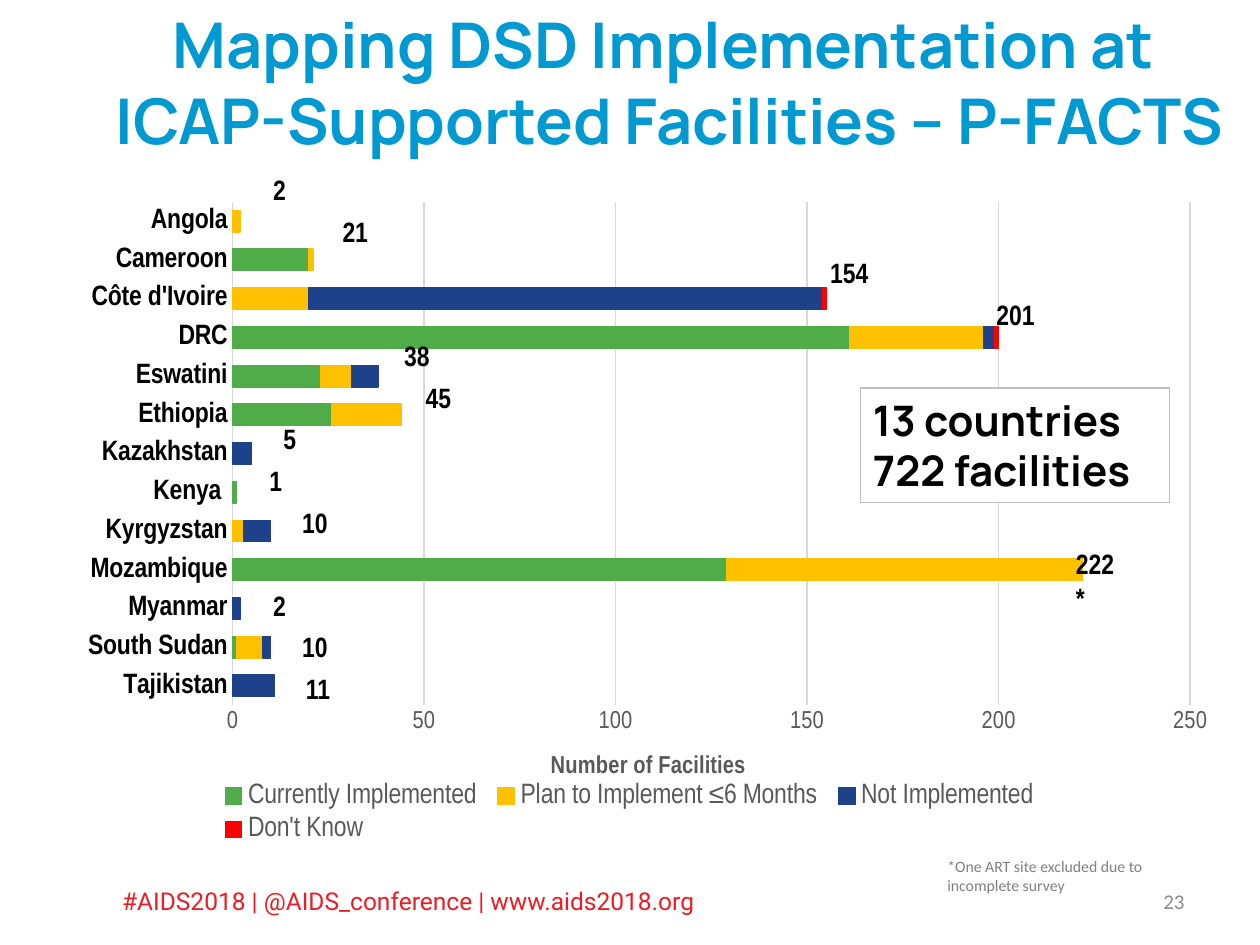
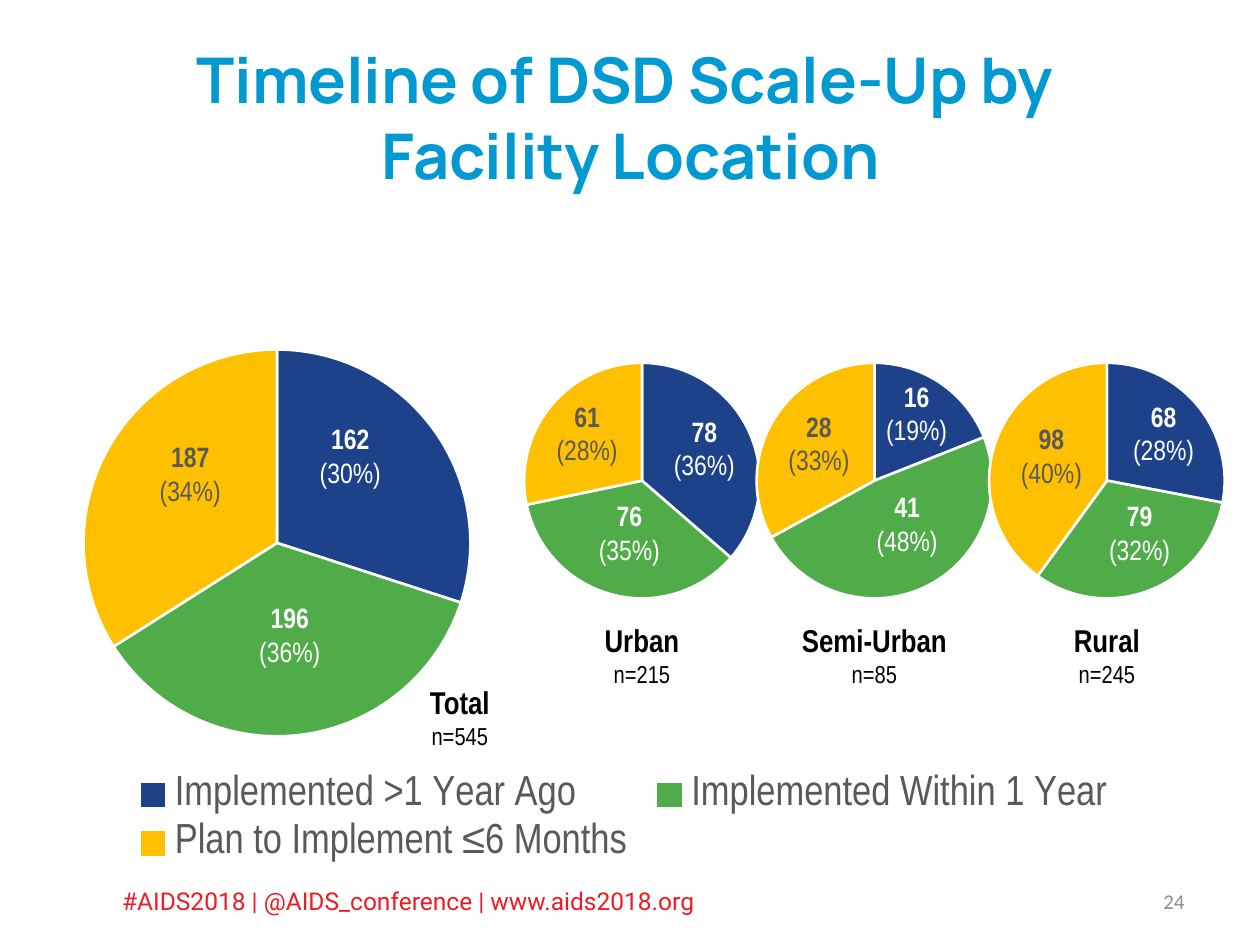
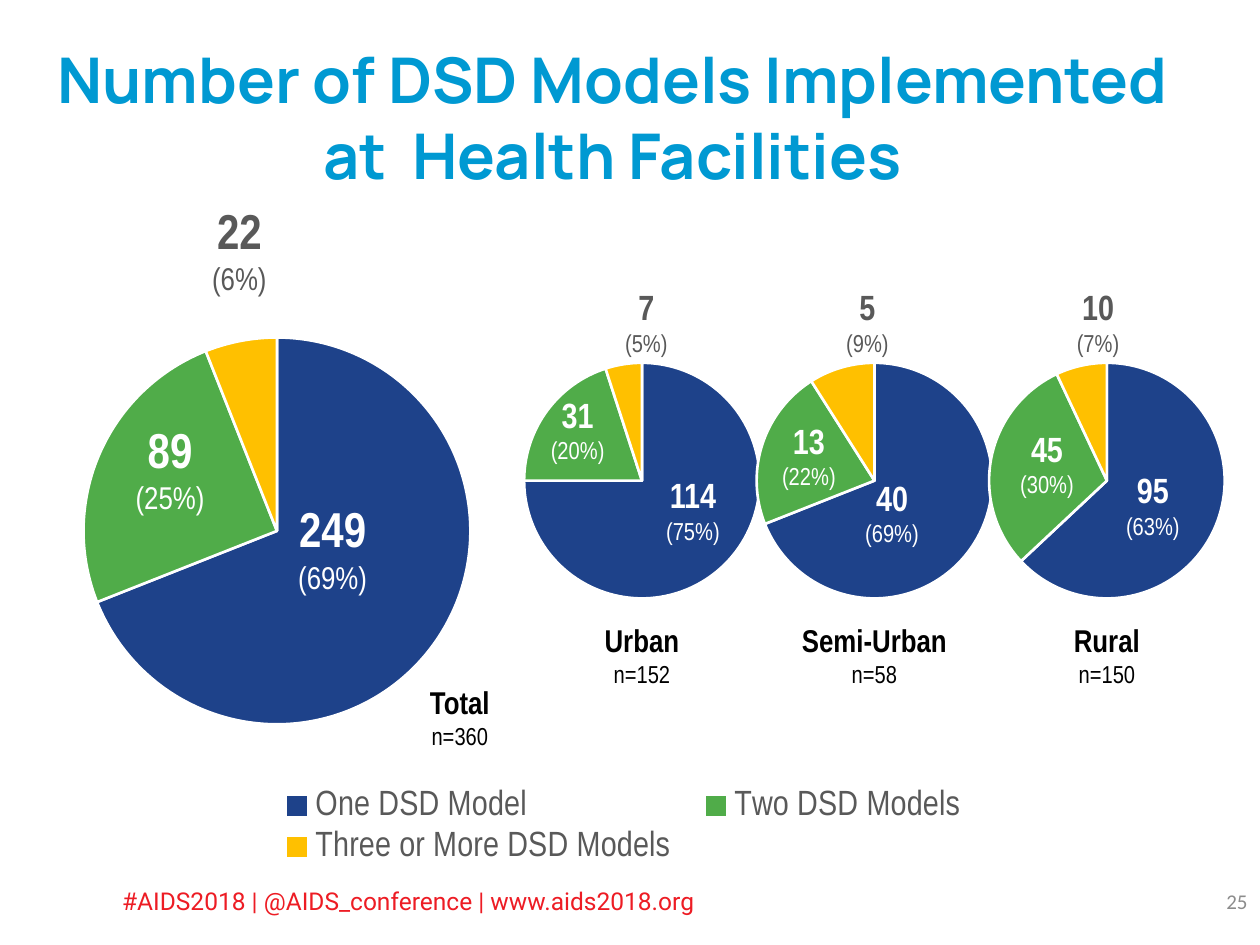
from lxml.etree import SubElement
from pptx import Presentation
from pptx.chart.data import CategoryChartData
from pptx.dml.color import RGBColor
from pptx.enum.chart import XL_CHART_TYPE, XL_LEGEND_POSITION, XL_TICK_MARK
from pptx.enum.shapes import MSO_SHAPE
from pptx.enum.text import MSO_ANCHOR, MSO_AUTO_SIZE, PP_ALIGN
from pptx.oxml import parse_xml
from pptx.oxml.ns import nsdecls, qn
from pptx.util import Inches, Pt

COLUMNS, ROWS = 100, 75
CELL = Inches(10) // COLUMNS

BLUE, GREEN, YELLOW, RED = "1E428A", "50AC49", "FFC000", "FF0000"
TITLE_BLUE, FOOTER_RED = "0099D2", "ED1C24"
BLACK, WHITE, GRAY, GRID_GRAY = "000000", "FFFFFF", "595959", "D9D9D9"
TITLE_FONT, FOOTER_FONT = "Manrope", "Roboto"
BODY_FONT, DATA_FONT = "Calibri", "Arial Narrow"
SLICE_COLORS = (BLUE, GREEN, YELLOW)
LABEL_COLORS = (WHITE, WHITE, GRAY)
FOOTER = "#AIDS2018 | @AIDS_conference | www.aids2018.org"

LOCATIONS = ("Urban", "Semi-Urban", "Rural")
LOCATION_LEFT, LOCATION_STEP = 38.8, 18.45
LOCATION_WIDTH, LOCATION_HEIGHT, LOCATION_TOP = 24.3, 21.5, 27.4

STATUSES = (
    ("Currently Implemented", GREEN),
    ("Plan to Implement ≤6 Months", YELLOW),
    ("Not Implemented", BLUE),
    ("Don't Know", RED),
)

# Country, facilities by status, total, column of the total
COUNTRIES = (
    ("Angola", (None, 2, None, None), "2", 20.7),
    ("Cameroon", (20, 1, None, None), "21", 26.2),
    ("Côte d'Ivoire", (None, 20, 134, 1), "154", 64.9),
    ("DRC", (161, 35, 3, 1), "201", 78.1),
    ("Eswatini", (23, 8, 7, None), "38", 31.1),
    ("Ethiopia", (26, 18, None, None), "45", 32.8),
    ("Kazakhstan", (None, None, 5, None), "5", 21.5),
    ("Kenya ", (1, None, None, None), "1", 20.4),
    ("Kyrgyzstan", (None, 3, 7, None), "10", 23),
    ("Mozambique", (129, 93, None, None), "222*", 84.4),
    ("Myanmar", (None, None, 2, None), "2", 20.7),
    ("South Sudan", (1, 7, 2, None), "10", 23),
    ("Tajikistan", (None, None, 11, None), "11", 23.3),
)

# Sample size, then count, percentage, centre column and top row of each slice label
TIMELINE_TOTAL = (545, ((162, 30, 27.8, 33), (196, 36, 23, 47.2), (187, 34, 15.1, 34.4)))
TIMELINE_LOCATIONS = (
    (215, ((78, 36, 55.9, 32.4), (76, 35, 49.95, 39.1), (61, 28, 46.6, 31.2))),
    (85, ((16, 19, 72.75, 29.6), (41, 48, 72, 38.4), (28, 33, 65, 32))),
    (245, ((68, 28, 92.35, 31.2), (79, 32, 90.45, 39.1), (98, 40, 83.45, 33))),
)
MODELS_TOTAL = (360, ((249, 69, 26.4, 39.1), (89, 25, 13.5, 32.8), (22, 6, 19, 15.4)))
MODELS_LOCATIONS = (
    (152, ((114, 75, 55, 37.1), (31, 20, 45.85, 30.7), (7, 5, 51.3, 22.2))),
    (58, ((40, 69, 70.8, 37.3), (13, 22, 64.2, 32.8), (5, 9, 68.85, 22.2))),
    (150, ((95, 63, 91.5, 36.7), (45, 30, 83.1, 33.4), (10, 7, 87.15, 22.2))),
)


def rgb(color):
    """Turn a hex string into a colour."""
    return RGBColor.from_string(color)


def place(column, row, columns, rows):
    """Turn grid cells into left, top, width and height."""
    return [int(length * CELL) for length in (column, row, columns, rows)]


def format_font(font, name, size, color, bold=False):
    """Set typeface, size, colour and weight."""
    font.name, font.size, font.bold = name, Pt(size), bold
    font.color.rgb = rgb(color)


def write_text(frame, text, font=DATA_FONT, size=16, color=BLACK, bold=False,
               align=PP_ALIGN.LEFT, anchor=MSO_ANCHOR.TOP, wrap=True, detail_size=None):
    """Fill a text frame; with a detail size, lines after the first are plain."""
    frame.word_wrap = wrap
    frame.auto_size = MSO_AUTO_SIZE.NONE
    frame.vertical_anchor = anchor
    frame.text = text
    for index, paragraph in enumerate(frame.paragraphs):
        paragraph.alignment = align
        is_detail = bool(index and detail_size)
        for run in paragraph.runs:
            format_font(run.font, font, detail_size if is_detail else size,
                        color, bold and not is_detail)


def add_text(slide, text, box, **text_format):
    """Add a text box on the grid."""
    write_text(slide.shapes.add_textbox(*place(*box)).text_frame, text, **text_format)


def add_centered_pair(slide, text, center, row, size, detail_size, color=BLACK):
    """Add a bold line over a plain one, centred on a column."""
    add_text(slide, text, (center - 5, row, 10, 6.4), size=size, color=color, bold=True,
             align=PP_ALIGN.CENTER, wrap=False, detail_size=detail_size)


def add_titled_slide(presentation, title, title_box, number, number_column=71.7):
    """Add a slide with its title, footer and number."""
    slide = presentation.slides.add_slide(presentation.slide_layouts[5])
    shape = slide.shapes.title
    shape.left, shape.top, shape.width, shape.height = place(*title_box)
    write_text(shape.text_frame, title, font=TITLE_FONT, size=36, color=TITLE_BLUE,
               bold=True, align=PP_ALIGN.CENTER, anchor=MSO_ANCHOR.MIDDLE)
    add_text(slide, FOOTER, (8.7, 69.8, 74.9, 3.4), font=FOOTER_FONT, size=14, color=FOOTER_RED)
    add_text(slide, number, (number_column, 69.5, 23.3, 4), font=BODY_FONT, size=12,
             color="8C8C8C", align=PP_ALIGN.RIGHT, anchor=MSO_ANCHOR.MIDDLE)
    return slide


def set_layout(element, position, index=1, inner=False):
    """Place a chart part by shares of the chart's size."""
    for layout in element.findall(qn("c:layout")):
        element.remove(layout)
    layout = parse_xml(f"<c:layout {nsdecls('c')}><c:manualLayout/></c:layout>")
    settings = [("layoutTarget", "inner")] if inner else []
    settings += [("xMode", "edge"), ("yMode", "edge"), *zip("xywh", position)]
    for tag, value in settings:
        SubElement(layout[0], qn(f"c:{tag}")).set("val", str(value))
    element.insert(index, layout)


def add_chart(slide, kind, box, data, plot_position):
    """Add a transparent chart with a placed plot area."""
    chart = slide.shapes.add_chart(kind, *place(*box), data).chart
    chart.has_title = False
    chart.has_legend = False
    format_font(chart.font, BODY_FONT, 10, BLACK)
    chart_space = chart._chartSpace
    chart_space.chart.addnext(parse_xml(
        f"<c:spPr {nsdecls('c', 'a')}><a:noFill/><a:ln><a:noFill/></a:ln></c:spPr>"))
    set_layout(chart_space.chart.plotArea, plot_position, index=0, inner=True)
    return chart


def add_legend(chart, side, size, position):
    """Add a placed legend."""
    chart.has_legend = True
    legend = chart.legend
    legend.position = side
    legend.include_in_layout = False
    format_font(legend.font, DATA_FONT, size, GRAY)
    set_layout(legend._element, position)


def add_facility_chart(slide):
    """Add the stacked bars of facilities by country."""
    countries = COUNTRIES[::-1]
    data = CategoryChartData()
    data.categories = [country for country, *_ in countries]
    for index, (status, _) in enumerate(STATUSES):
        data.add_series(status, [counts[index] for _, counts, *_ in countries])
    chart = add_chart(slide, XL_CHART_TYPE.BAR_STACKED, (2.8, 13.2, 94.3, 54.3),
                      data, (0.166, 0.052, 0.806, 0.736))
    plot = chart.plots[0]
    plot.gap_width, plot.overlap, plot.vary_by_categories = 79, 100, False
    for series, (_, color) in zip(plot.series, STATUSES):
        series.format.fill.solid()
        series.format.fill.fore_color.rgb = rgb(color)
        series.format.line.color.rgb = rgb(color)
        series.format.line.width = Pt(0.75)

    country_axis, count_axis = chart.category_axis, chart.value_axis
    for axis in (country_axis, count_axis):
        axis.major_tick_mark = axis.minor_tick_mark = XL_TICK_MARK.NONE
    format_font(country_axis.tick_labels.font, DATA_FONT, 16, BLACK, bold=True)
    format_font(count_axis.tick_labels.font, DATA_FONT, 14, GRAY)
    count_axis.minimum_scale, count_axis.maximum_scale, count_axis.major_unit = 0, 250, 50
    count_axis.has_major_gridlines = True
    count_axis.format.line.fill.background()
    for line in (country_axis.format.line, count_axis.major_gridlines.format.line):
        line.color.rgb = rgb(GRID_GRAY)
        line.width = Pt(0.75)
    title = count_axis.axis_title
    title.text_frame.text = "Number of Facilities"
    format_font(title.text_frame.paragraphs[0].runs[0].font, DATA_FONT, 14, GRAY, bold=True)
    set_layout(title._element, (0.43, 0.85))
    add_legend(chart, XL_LEGEND_POSITION.RIGHT, 16, (0.15, 0.89, 0.7, 0.11))


def add_pie(slide, box, categories, slices, plot_position):
    """Add a pie of percentages with white slice borders."""
    data = CategoryChartData()
    data.categories = categories
    data.add_series("Series 1", [percent for _, percent, *_ in slices])
    chart = add_chart(slide, XL_CHART_TYPE.PIE, box, data, plot_position)
    plot = chart.plots[0]
    plot.vary_by_categories = True
    for index, color in enumerate(SLICE_COLORS):
        point_format = plot.series[0].points[index].format
        point_format.fill.solid()
        point_format.fill.fore_color.rgb = rgb(color)
        point_format.line.color.rgb = rgb(WHITE)
        point_format.line.width = Pt(1.5)
    return chart


def add_slice_labels(slide, slices, size, detail_size):
    """Add a count and percentage for each slice."""
    for (count, percent, center, row), color in zip(slices, LABEL_COLORS):
        add_centered_pair(slide, f"{count}\n({percent}%)", center, row, size, detail_size, color)


def add_pie_comparison(slide, categories, total, locations, total_box, legend_size,
                       legend_position, total_sizes, location_sizes):
    """Add the total pie and a row of pies by facility location."""
    total_sample, total_slices = total
    chart = add_pie(slide, total_box, categories, total_slices, (0.035, 0.063, 0.333, 0.87))
    add_legend(chart, XL_LEGEND_POSITION.BOTTOM, legend_size, legend_position)
    add_centered_pair(slide, f"Total\nn={total_sample}", 36.5, 53.7, 18, 14)
    for index, (name, (sample, slices)) in enumerate(zip(LOCATIONS, locations)):
        left = LOCATION_LEFT + index * LOCATION_STEP
        add_pie(slide, (left, LOCATION_TOP, LOCATION_WIDTH, LOCATION_HEIGHT),
                ("1", "2", "3"), slices, (0.115, 0.065, 0.77, 0.87))
        add_centered_pair(slide, f"{name}\nn={sample}", left + LOCATION_WIDTH / 2, 48.8, 18, 14)
    add_slice_labels(slide, total_slices, *total_sizes)
    for _, slices in locations:
        add_slice_labels(slide, slices, *location_sizes)


def add_callout(slide, text, box):
    """Add a bordered white box with bold text."""
    shape = slide.shapes.add_shape(MSO_SHAPE.RECTANGLE, *place(*box))
    shape.shadow.inherit = False
    shape.fill.solid()
    shape.fill.fore_color.rgb = rgb(WHITE)
    shape.line.color.rgb = rgb("BFBFBF")
    shape.line.width = Pt(0.75)
    write_text(shape.text_frame, text, font=TITLE_FONT, size=24, bold=True)


def build_mapping_slide(presentation):
    """Build the slide on facilities by country."""
    slide = add_titled_slide(
        presentation, "Mapping DSD Implementation at \vICAP-Supported Facilities – P-FACTS",
        (6.3, 0.2, 93.7, 12.5), "23")
    add_facility_chart(slide)
    add_callout(slide, "13 countries\n722 facilities", (68.3, 30.8, 24.5, 9.1))
    add_text(slide, "*One ART site excluded due to incomplete survey", (74.2, 67.5, 21.4, 4),
             font=BODY_FONT, size=9, color="808080")
    for index, (*_, total, column) in enumerate(COUNTRIES):
        add_text(slide, total, (column, 13.2 + 3.3 * index, 5.5, 3.7), bold=True)


def build_timeline_slide(presentation):
    """Build the slide on the timeline of scale-up."""
    slide = add_titled_slide(presentation, "Timeline of DSD Scale-Up by \vFacility Location",
                             (6.2, 3, 87.7, 12.5), "24")
    add_pie_comparison(
        slide,
        ("Implemented >1 Year Ago", "Implemented Within 1 Year", "Plan to Implement ≤6 Months"),
        TIMELINE_TOTAL, TIMELINE_LOCATIONS, (3.4, 17.2, 92.2, 52),
        legend_size=24, legend_position=(0.07, 0.84, 0.86, 0.16),
        total_sizes=(16, 16), location_sizes=(16, 16))


def build_models_slide(presentation):
    """Build the slide on the number of models."""
    slide = add_titled_slide(presentation, "Number of DSD Models Implemented at  Health Facilities",
                             (3.4, 3, 90.4, 12.5), "25", number_column=76.7)
    add_pie_comparison(
        slide, ("One DSD Model", "Two DSD Models", "Three or More DSD Models"),
        MODELS_TOTAL, MODELS_LOCATIONS, (3.4, 15.4, 92.2, 53.7),
        legend_size=20, legend_position=(0.19, 0.87, 0.62, 0.13),
        total_sizes=(28, 18), location_sizes=(20, 14))


def main():
    """Build and save the presentation."""
    presentation = Presentation()
    presentation.slide_width, presentation.slide_height = COLUMNS * CELL, ROWS * CELL
    build_mapping_slide(presentation)
    build_timeline_slide(presentation)
    build_models_slide(presentation)
    presentation.save("out.pptx")


if __name__ == "__main__":
    main()
